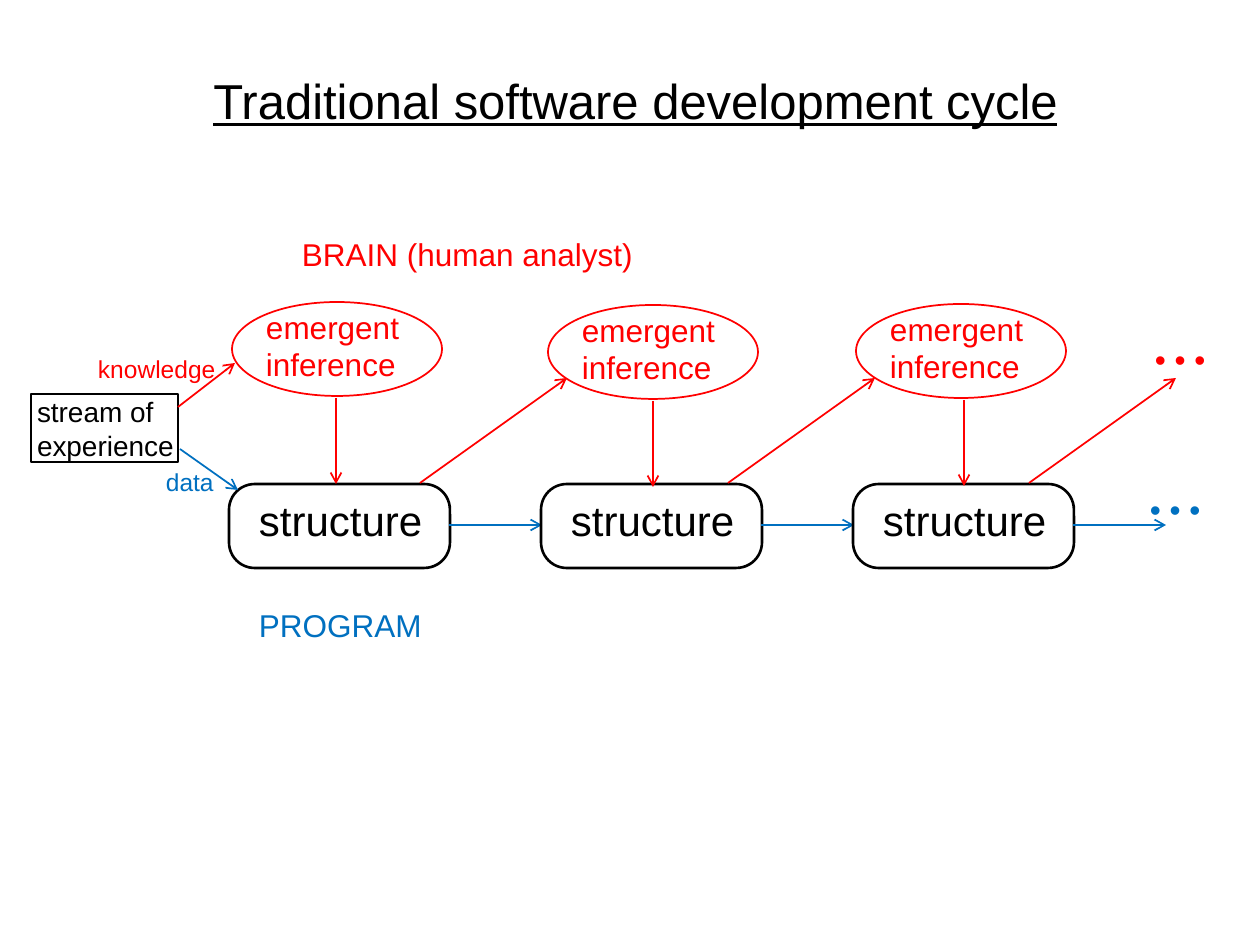
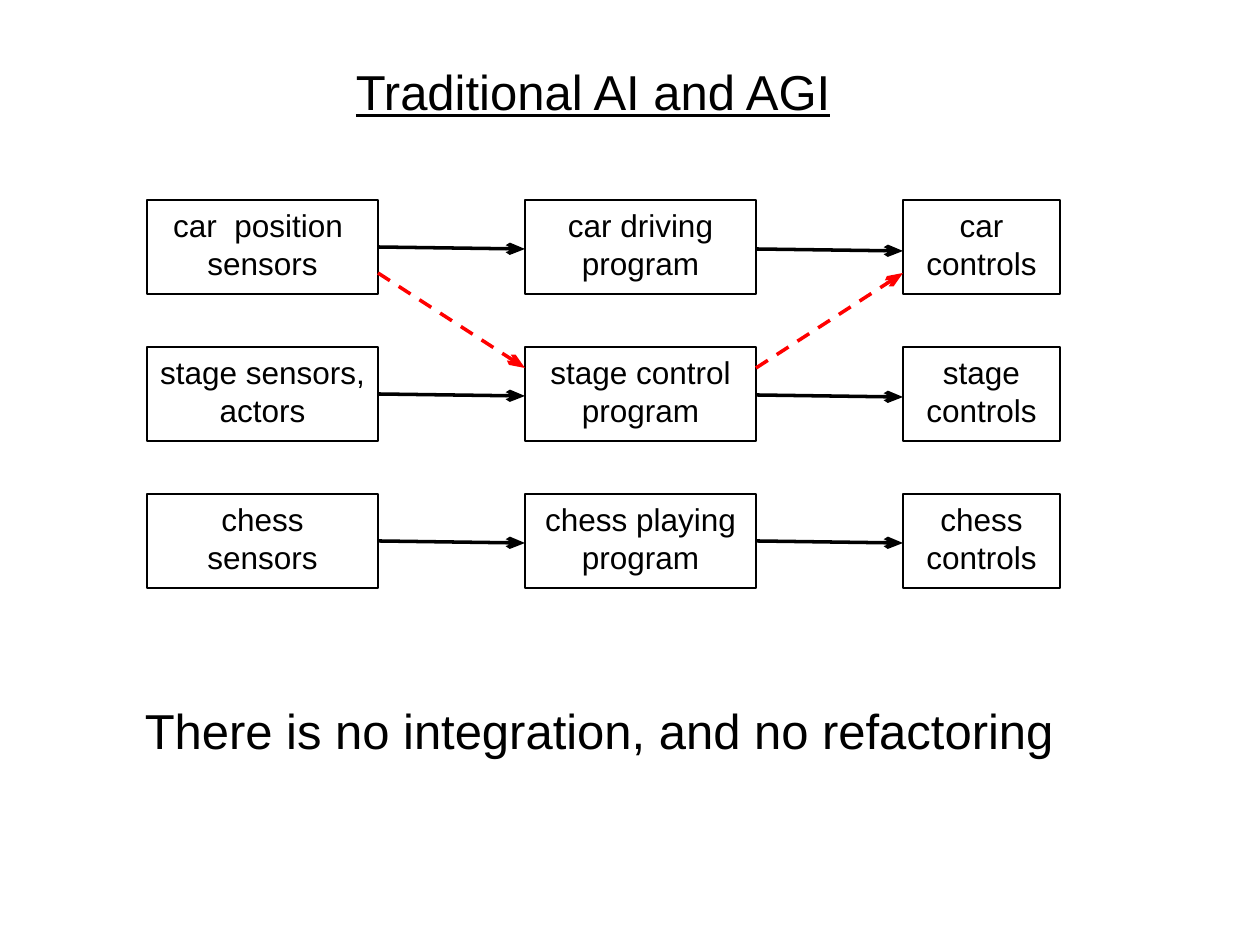
from lxml import etree
from pptx import Presentation
from pptx.dml.color import RGBColor
from pptx.enum.dml import MSO_LINE
from pptx.enum.shapes import MSO_CONNECTOR, MSO_SHAPE
from pptx.enum.text import MSO_ANCHOR, MSO_AUTO_SIZE, PP_ALIGN
from pptx.oxml.ns import qn
from pptx.util import Emu, Pt

PX = 914400 / 126
FONT = "Arial"
COLORS = {"ink": "000000", "brain": "FF0000", "program": "0070C0"}


def px(length):
    return Emu(round(length * PX))


def color(name):
    return RGBColor.from_string(COLORS[name])


def write(shape, lines, size, tone="ink", align=PP_ALIGN.LEFT,
          anchor=MSO_ANCHOR.TOP, indent=None, underline=False, wrap=False):
    """Fill a shape with text; an indent replaces the default margins."""
    frame = shape.text_frame
    frame.word_wrap = wrap
    frame.auto_size = MSO_AUTO_SIZE.NONE if wrap else MSO_AUTO_SIZE.SHAPE_TO_FIT_TEXT
    frame.vertical_anchor = anchor
    if indent is not None:
        frame.margin_left = px(indent)
        frame.margin_right = frame.margin_top = frame.margin_bottom = 0
    for index, line in enumerate(lines):
        paragraph = frame.add_paragraph() if index else frame.paragraphs[0]
        paragraph.alignment = align
        run = paragraph.add_run()
        run.text = line
        run.font.name = FONT
        run.font.size = Pt(size)
        run.font.color.rgb = color(tone)
        if underline:
            run.font.underline = True


def add_label(slide, box, lines, size, tone="ink", indent=0,
              anchor=MSO_ANCHOR.MIDDLE):
    label = slide.shapes.add_textbox(*map(px, box))
    write(label, lines, size, tone, anchor=anchor, indent=indent)


def add_headline(slide, box, text, underline=True):
    headline = slide.shapes.add_textbox(*map(px, box))
    write(headline, [text], 28, align=PP_ALIGN.CENTER, underline=underline)


def add_outline(slide, kind, box, tone="ink", weight=1):
    outline = slide.shapes.add_shape(kind, *map(px, box))
    outline.shadow.inherit = False
    outline.fill.background()
    outline.line.color.rgb = color(tone)
    outline.line.width = Pt(weight)
    return outline


def add_arrow(slide, start, end, tone="ink", weight=1, dashed=False, head="med"):
    arrow = slide.shapes.add_connector(
        MSO_CONNECTOR.STRAIGHT, *map(px, (*start, *end)))
    arrow.line.color.rgb = color(tone)
    arrow.line.width = Pt(weight)
    if dashed:
        arrow.line.dash_style = MSO_LINE.DASH
    # Arrowhead at the end, and no shadow
    etree.SubElement(arrow.line._get_or_add_ln(), qn("a:tailEnd"),
                     type="arrow", w="med", len=head)
    etree.SubElement(arrow._element.spPr, qn("a:effectLst"))


def add_structure(slide, left, top):
    """One program state and the arrow to the next one."""
    width, height = 221, 84
    block = add_outline(slide, MSO_SHAPE.ROUNDED_RECTANGLE,
                        (left, top, width, height), weight=1.5)
    block.adjustments[0] = 0.306
    add_label(slide, (left + 22, top + 11, 179, 50), ["structure"], 24, indent=8)
    add_arrow(slide, (left + width - 1, top + 41), (left + 313, top + 41), "program")


def add_inference(slide, left, top, stem):
    """One step in the analyst's mind and its arrow down to the program."""
    height = 94
    add_outline(slide, MSO_SHAPE.OVAL, (left, top, 210, height), "brain")
    add_label(slide, (left + 11, top + 5, 179, 77),
              ["emergent", "inference"], 18, "brain", indent=23)
    add_arrow(slide, (stem, top + height + 2), (stem, top + height + 88), "brain")


def add_experience(slide, left, top):
    """The source of knowledge and data."""
    stream = add_outline(slide, MSO_SHAPE.RECTANGLE, (left, top, 147, 68))
    write(stream, ["stream of", "experience"], 16,
          anchor=MSO_ANCHOR.MIDDLE, indent=6)
    add_arrow(slide, (left + 147, top + 13), (left + 204, top - 31), "brain")
    add_arrow(slide, (left + 149, top + 55), (left + 207, top + 96), "program")
    add_label(slide, (left + 57, top - 40, 136, 30), ["knowledge"], 14, "brain", 10)
    add_label(slide, (left + 128, top + 73, 63, 30), ["data"], 14, "program", 7)


def build_cycle_slide(slide):
    add_headline(slide, (168, 64, 935, 72), "Traditional software development cycle")
    add_label(slide, (273, 235, 388, 38), ["BRAIN (human analyst)"], 18, "brain", 29)
    add_label(slide, (251, 606, 179, 38), ["PROGRAM"], 18, "program", 8)

    for step in range(3):
        add_structure(slide, 229 + 312 * step, 484)
    for left, top, stem in ((232, 302, 336), (548, 305, 653), (856, 304, 964)):
        add_inference(slide, left, top, stem)
    # Feedback from each structure to the next inference
    for foot in (420, 728, 1029):
        add_arrow(slide, (foot, 483), (foot + 147, 378), "brain")
    # The cycle goes on
    for left, top, tone in ((1150, 490, "program"), (1155, 340, "brain")):
        add_label(slide, (left, top, 53, 38), ["• • •"], 18, tone,
                  anchor=MSO_ANCHOR.TOP)
    add_experience(slide, 31, 394)


def add_systems(slide, left, top, systems):
    """Grid with one isolated system a row: sensors, program, controls."""
    column_step, row_step, height = 378, 147, 94
    widths = (231, 231, 157)
    columns = [left + column_step * column for column in range(3)]
    gaps = [(columns[i] + widths[i], columns[i + 1]) for i in range(2)]

    for row, stages in enumerate(systems):
        row_top = top + row_step * row
        for column, width, lines in zip(columns, widths, stages):
            stage = add_outline(slide, MSO_SHAPE.RECTANGLE,
                                (column, row_top, width, height))
            write(stage, lines, 18, align=PP_ALIGN.CENTER, wrap=True)
        for (start, end), drop in zip(gaps, (48, 50 - row)):
            add_arrow(slide, (start, row_top + drop - 1),
                      (end, row_top + drop + 1), weight=2, head="lg")

    # Missing links between the first two systems
    car, stage_control = top + 73, top + 168
    for (start, end), (y1, y2) in zip(gaps, ((car, stage_control), (stage_control, car))):
        add_arrow(slide, (start, y1), (end, y2), "brain", 2, dashed=True, head="lg")


def build_systems_slide(slide):
    add_headline(slide, (168, 55, 850, 72), "Traditional AI and AGI")
    add_systems(slide, 147, 200, (
        (("car  position ", "sensors"), ("car driving", "program"), ("car", "controls")),
        (("stage sensors,", "actors"), ("stage control", "program"), ("stage", "controls")),
        (("chess", "sensors"), ("chess playing", "program"), ("chess", "controls")),
    ))
    add_headline(slide, (116, 694, 966, 72),
                 "There is no integration, and no refactoring", underline=False)


def main():
    deck = Presentation()
    deck.slide_width, deck.slide_height = px(1260), px(945)
    blank = deck.slide_layouts[6]
    for build in (build_cycle_slide, build_systems_slide):
        build(deck.slides.add_slide(blank))
    deck.save("out.pptx")


if __name__ == "__main__":
    main()
